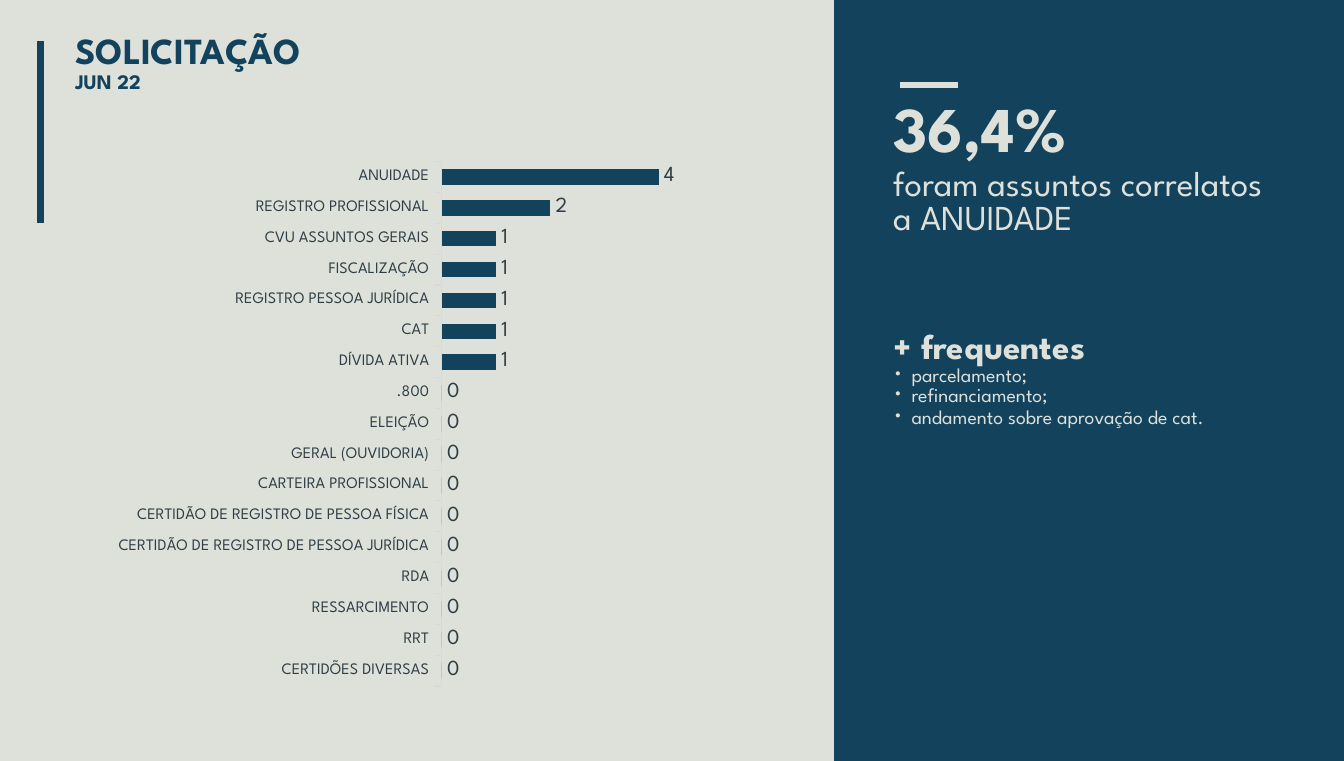
import pptx
import pptx.chart.data
import pptx.dml.color
import pptx.enum.chart
import pptx.enum.shapes
import pptx.enum.text
import pptx.util
from lxml import etree

Cm, Pt = pptx.util.Cm, pptx.util.Pt
RGB = pptx.dml.color.RGBColor.from_string


class Theme:
    face = "League Spartan"
    navy, pale = RGB("13425D"), RGB("DDE1DA")
    ink, axis = RGB("2E3D46"), RGB("D9D9D9")
    title, sub, huge, lead, list, label, value = 20.5, 11.5, 35.5, 19.5, 11, 8.9, 12


def write(frame, text, size, color, line, bold=False, gap=0, bullet=False):
    """Add one styled paragraph, filling the empty first one if there is one."""
    para = frame.paragraphs[0] if not frame.text else frame.add_paragraph()
    para.text = text
    if bullet:
        props = para._p.get_or_add_pPr()
        props.set("marL", str(Cm(0.36)))
        props.set("indent", str(-Cm(0.36)))
        for tag, key, val in (("a:buFont", "typeface", Theme.face), ("a:buChar", "char", "•")):
            etree.SubElement(props, pptx.oxml.ns.qn(tag)).set(key, val)
    para.alignment = pptx.enum.text.PP_ALIGN.LEFT
    para.line_spacing, para.space_before = Pt(line), Pt(gap)
    font = para.font
    font.name, font.size, font.bold = Theme.face, Pt(size), bold
    font.color.rgb = color


def setup(frame):
    """Clear the margins and pin the text to the top."""
    frame.word_wrap = True
    frame.auto_size = pptx.enum.text.MSO_AUTO_SIZE.NONE
    frame.vertical_anchor = pptx.enum.text.MSO_ANCHOR.TOP
    frame.margin_left = frame.margin_right = frame.margin_bottom = 0
    frame.margin_top = Cm(0.03)
    return frame


deck = pptx.Presentation()
deck.slide_width, deck.slide_height = Cm(26.42), Cm(14.96)
slide = deck.slides.add_slide(deck.slide_layouts[5])
shapes = slide.shapes

# Backdrop and side panel
for left, color in ((0, Theme.pale), (Cm(16.4), Theme.navy)):
    panel = shapes.add_shape(pptx.enum.shapes.MSO_SHAPE.RECTANGLE,
                             left, 0, deck.slide_width - left, deck.slide_height)
    panel.shadow.inherit = False
    panel.fill.solid()
    panel.fill.fore_color.rgb = color
    panel.line.fill.background()

# Accent rules
for x1, y1, x2, y2, color in ((17.7, 1.67, 18.83, 1.67, Theme.pale),
                              (0.8, 0.8, 0.8, 4.38, Theme.navy)):
    rule = shapes.add_connector(pptx.enum.shapes.MSO_CONNECTOR.STRAIGHT,
                                Cm(x1), Cm(y1), Cm(x2), Cm(y2))
    rule.line.color.rgb, rule.line.width = color, Pt(3.6)
    etree.SubElement(rule._element.spPr, pptx.oxml.ns.qn("a:effectLst"))

# Title, brought in front of the backdrop
title = shapes.title
shapes._spTree.append(title._element)
title.left, title.top, title.width, title.height = Cm(1.48), Cm(0.56), Cm(14.78), Cm(1.9)
frame = setup(title.text_frame)
write(frame, "SOLICITAÇÃO", Theme.title, Theme.navy, 23.1, bold=True, gap=1.1)
write(frame, "JUN 22", Theme.sub, Theme.navy, 12.3, bold=True)

# Chart of requests by subject
counts = {
    "ANUIDADE": 4, "REGISTRO PROFISSIONAL": 2, "CVU ASSUNTOS GERAIS": 1,
    "FISCALIZAÇÃO": 1, "REGISTRO PESSOA JURÍDICA": 1, "CAT": 1,
    "DÍVIDA ATIVA": 1, ".800": 0, "ELEIÇÃO": 0, "GERAL (OUVIDORIA)": 0,
    "CARTEIRA PROFISSIONAL": 0, "CERTIDÃO DE REGISTRO DE PESSOA FÍSICA": 0,
    "CERTIDÃO DE REGISTRO DE PESSOA JURÍDICA": 0, "RDA": 0,
    "RESSARCIMENTO": 0, "RRT": 0, "CERTIDÕES DIVERSAS": 0,
}
data = pptx.chart.data.CategoryChartData(number_format="0")
data.categories = list(counts)
data.add_series("Solicitações", list(counts.values()))
chart = shapes.add_chart(pptx.enum.chart.XL_CHART_TYPE.BAR_CLUSTERED,
                         Cm(1.4), Cm(2.83), Cm(13), Cm(11), data).chart
chart.has_legend = chart.has_title = False
chart.font.name, chart.font.size = Theme.face, Pt(Theme.label)
chart.font.color.rgb = Theme.ink

plot = chart.plots[0]
plot.gap_width, plot.vary_by_categories = 100, False
bars = plot.series[0].format.fill
bars.solid()
bars.fore_color.rgb = Theme.navy
plot.has_data_labels = True
labels = plot.data_labels
labels.show_value = True
labels.position = pptx.enum.chart.XL_LABEL_POSITION.OUTSIDE_END
labels.font.name, labels.font.size = Theme.face, Pt(Theme.value)
labels.font.color.rgb = Theme.ink

names, scale = chart.category_axis, chart.value_axis
names.reverse_order = True
names.major_tick_mark = pptx.enum.chart.XL_TICK_MARK.OUTSIDE
names.format.line.color.rgb, names.format.line.width = Theme.axis, Pt(0.6)
scale.minimum_scale, scale.maximum_scale = 0, 5
scale.has_major_gridlines = scale.visible = False

# Fixed plot area, as shares of the chart frame
area = chart._chartSpace.chart.plotArea
for old in area.findall(pptx.oxml.ns.qn("c:layout")):
    area.remove(old)
layout = etree.Element(pptx.oxml.ns.qn("c:layout"))
area.insert(0, layout)
manual = etree.SubElement(layout, pptx.oxml.ns.qn("c:manualLayout"))
for tag, val in (("layoutTarget", "inner"), ("xMode", "edge"), ("yMode", "edge"),
                 ("x", 7.29 / 13), ("y", 0.35 / 11), ("w", 5.33 / 13), ("h", 10.31 / 11)):
    etree.SubElement(manual, pptx.oxml.ns.qn("c:" + tag)).set("val", str(val))

# Key figure
frame = setup(shapes.add_textbox(Cm(17.56), Cm(1.78), Cm(7.7), Cm(2.95)).text_frame)
write(frame, "36,4%", Theme.huge, Theme.pale, 40.8, bold=True, gap=1.1)
write(frame, "foram assuntos correlatos a ANUIDADE", Theme.lead, Theme.pale, 18.9, gap=2.5)

# Most frequent subjects
frame = setup(shapes.add_textbox(Cm(17.56), Cm(6.38), Cm(7.8), Cm(2.08)).text_frame)
write(frame, "+ frequentes", Theme.lead, Theme.pale, 22.4, bold=True, gap=0.9)
for text, line in (("parcelamento;", 11.2), ("refinanciamento;", 11.2),
                   ("andamento sobre aprovação de cat.", 12.2)):
    write(frame, text, Theme.list, Theme.pale, line, bullet=True)

deck.save("out.pptx")
